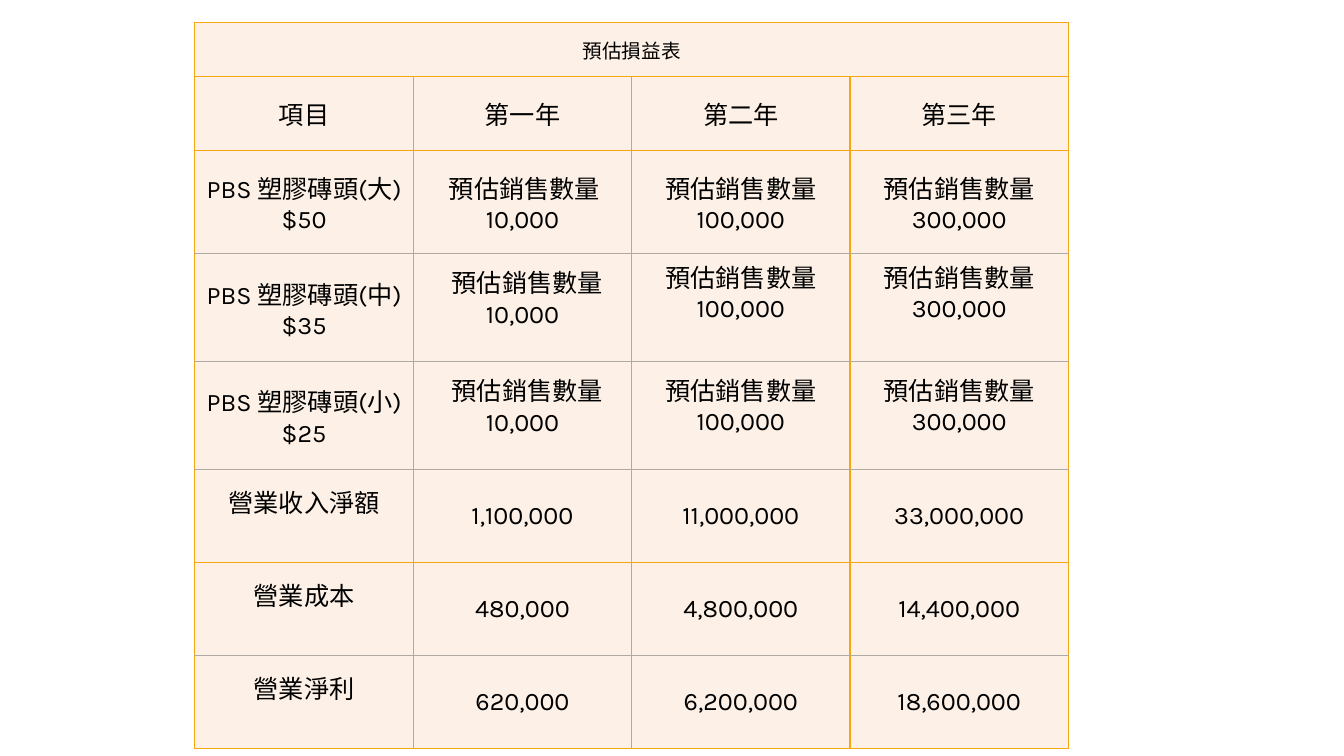
from pptx import Presentation, util as u
from pptx.dml.color import RGBColor
from pptx.enum import text
from pptx.oxml import parse_xml
from pptx.oxml.ns import nsdecls

ORANGE, GREY, CREAM, BLACK = "F5A70D", "B0AAA5", "FDF1E7", "000000"
UNITS = "預估銷售數量\n"
ROWS = [
    ["預估損益表", "", "", ""],
    ["項目", "第一年", "第二年", "第三年"],
    ["PBS 塑膠磚頭(大) $50"] + [UNITS + n for n in ("10,000", "100,000", "300,000")],
    ["PBS 塑膠磚頭(中)\n$35"] + [UNITS + n for n in ("10,000", "100,000", "300,000")],
    ["PBS 塑膠磚頭(小)\n$25"] + [UNITS + n for n in ("10,000", "100,000", "300,000")],
    ["營業收入淨額", "1,100,000", "11,000,000", "33,000,000"],
    ["營業成本", "480,000", "4,800,000", "14,400,000"],
    ["營業淨利", "620,000", "6,200,000", "18,600,000"],
]
HEIGHTS = [38.8, 52.8, 73.8, 77.1, 77.1, 66.4, 66.4, 66.4]
COL_WIDTH = 156
ORANGE_ROW_EDGES = {0, 1, 2, 6, 8}
ORANGE_COL_EDGES = {0, 3, 4}
BOTTOM_MARGINS = {(3, 1): 16, (3, 2): 24, (3, 3): 24, (4, 1): 16, (4, 2): 17,
                  (4, 3): 17, (5, 0): 21, (6, 0): 21, (7, 0): 21}
FIRST_LINE_SHIFTS = {(2, 1): 3, (3, 1): 7, (4, 1): 7}


def rgb(value):
    return RGBColor.from_string(value)


class Deck:
    """Hold the text style and the current slide, and add elements to it."""

    def __init__(self, prs, font):
        self.font = font
        self.s = prs.slides.add_slide(prs.slide_layouts[6])

    def table(self, left, top, col_width, heights):
        n_cols = len(ROWS[0])
        frame = self.s.shapes.add_table(
            len(heights), n_cols, u.Pt(left), u.Pt(top),
            u.Pt(col_width * n_cols), u.Pt(sum(heights)))
        table = frame.table
        table.first_row = table.horz_banding = False
        for col in table.columns:
            col.width = u.Pt(col_width)
        for row, height in zip(table.rows, heights):
            row.height = u.Pt(height)
        return table

    def border(self, cell, side, color):
        cell._tc.get_or_add_tcPr().append(parse_xml(
            f'<a:ln{side} {nsdecls("a")} w="{u.Pt(1)}"><a:solidFill>'
            f'<a:srgbClr val="{color}"/></a:solidFill></a:ln{side}>'))

    def cell(self, cell, words, edges, size, margins, shift):
        for side, color in zip("LRTB", edges):
            self.border(cell, side, color)
        cell.fill.solid()
        cell.fill.fore_color.rgb = rgb(CREAM)
        cell.vertical_anchor = text.MSO_ANCHOR.MIDDLE
        side, top, bottom = margins
        cell.margin_left = cell.margin_right = u.Pt(side)
        cell.margin_top, cell.margin_bottom = u.Pt(top), u.Pt(bottom)
        tf = cell.text_frame
        tf.text = words
        if shift:
            tf.paragraphs[0]._p.get_or_add_pPr().set("marL", str(u.Pt(shift)))
        for p in tf.paragraphs:
            p.alignment = text.PP_ALIGN.CENTER
            for r in p.runs:
                r.font.name, r.font.size = self.font, u.Pt(size)
                r.font.color.rgb = rgb(BLACK)


def main():
    prs = Presentation()
    prs.slide_width, prs.slide_height = u.Pt(960), u.Pt(540)
    deck = Deck(prs, "Karla")
    table = deck.table(139.2, 16, COL_WIDTH, HEIGHTS)
    for i, row in enumerate(ROWS):
        for j, words in enumerate(row):
            edges = [ORANGE if j + k in ORANGE_COL_EDGES else GREY for k in (0, 1)]
            edges += [ORANGE if i + k in ORANGE_ROW_EDGES else GREY for k in (0, 1)]
            if i == 0:
                edges = [ORANGE] * 4
            bottom = BOTTOM_MARGINS.get((i, j), 0)
            margins = (7.2, 5, 5) if i < 2 else (5, 0, bottom)
            deck.cell(table.cell(i, j), words, edges, 18 if i else 14, margins,
                      FIRST_LINE_SHIFTS.get((i, j), 0))
    table.cell(0, 0).merge(table.cell(0, 3))
    prs.save("out.pptx")


if __name__ == "__main__":
    main()
